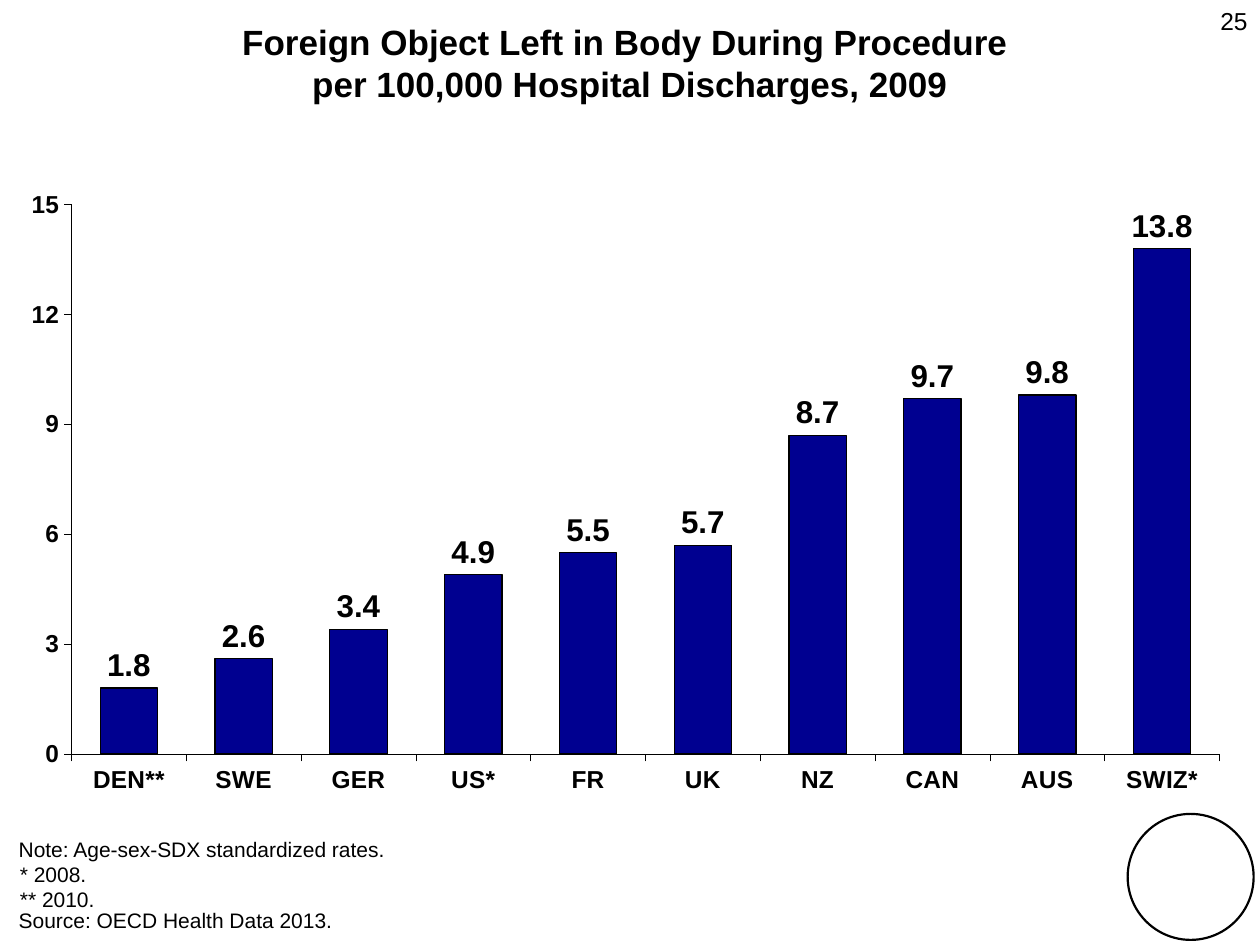
from lxml.etree import SubElement
from pptx import Presentation
from pptx.chart.data import CategoryChartData
from pptx.dml.color import RGBColor
from pptx.enum.chart import XL_CHART_TYPE as ChartType
from pptx.enum.chart import XL_LABEL_POSITION as LabelPosition
from pptx.enum.chart import XL_TICK_MARK as TickMark
from pptx.enum.shapes import MSO_SHAPE as Preset
from pptx.enum.text import MSO_ANCHOR as Anchor
from pptx.enum.text import PP_ALIGN as Align
from pptx.oxml.ns import qn
from pptx.util import Inches, Pt

FONT, BLACK, NAVY = "Arial", "000000", "000090"
WIDTH, HEIGHT = Inches(10), Inches(7.5)
COLUMNS, ROWS = 100, 75

RATES = {"DEN**": 1.8, "SWE": 2.6, "GER": 3.4, "US*": 4.9, "FR": 5.5,
         "UK": 5.7, "NZ": 8.7, "CAN": 9.7, "AUS": 9.8, "SWIZ*": 13.8}


def color(value):
    return RGBColor.from_string(value)


def place(left, top, columns, rows):
    """Turn grid columns and rows into slide lengths."""
    return (int(WIDTH * left / COLUMNS), int(HEIGHT * top / ROWS),
            int(WIDTH * columns / COLUMNS), int(HEIGHT * rows / ROWS))


def style_font(font, size, bold=False):
    font.name, font.size, font.bold = FONT, Pt(size), bold
    font.color.rgb = color(BLACK)


def style_line(line, width):
    line.color.rgb = color(BLACK)
    line.width = Pt(width)


def add_text(slide, box, lines, size=12, bold=False, align=Align.LEFT, anchor=Anchor.TOP):
    """Add one paragraph per line; a vertical tab breaks within a paragraph."""
    frame = slide.shapes.add_textbox(*place(*box)).text_frame
    frame.word_wrap = True
    frame.vertical_anchor = anchor
    frame.text = "\n".join(lines)
    for paragraph in frame.paragraphs:
        paragraph.alignment = align
        for run in paragraph.runs:
            style_font(run.font, size, bold)


def add_header(slide, box):
    left, top, columns, rows = box
    add_text(slide, (left, top + 1, columns, rows - 1),
             ["Foreign Object Left in Body During Procedure \v"
              "per 100,000 Hospital Discharges, 2009"],
             size=20, bold=True, align=Align.CENTER, anchor=Anchor.MIDDLE)
    number_width = 23.3
    add_text(slide, (left + columns - number_width, top, number_width, 5.2),
             ["25"], size=14, align=Align.RIGHT)


def set_plot_area(chart, x, y, w, h):
    """Fix the inner plot area as shares of the chart."""
    plot_area = chart._chartSpace.chart.plotArea
    layout = plot_area.find(qn("c:layout"))
    if layout is None:
        layout = SubElement(plot_area, qn("c:layout"))
        plot_area.insert(0, layout)
    manual = SubElement(layout, qn("c:manualLayout"))
    settings = {"layoutTarget": "inner", "xMode": "edge", "yMode": "edge",
                "x": x, "y": y, "w": w, "h": h}
    for name, value in settings.items():
        SubElement(manual, qn(f"c:{name}")).set("val", str(value))


def add_rate_chart(slide, box):
    data = CategoryChartData()
    data.categories = list(RATES)
    data.add_series("Series 1", list(RATES.values()))
    chart = slide.shapes.add_chart(ChartType.COLUMN_CLUSTERED, *place(*box), data).chart
    chart.has_legend = chart.has_title = False
    style_font(chart.font, 14, bold=True)
    set_plot_area(chart, 0.03, 0.07, 0.97, 0.86)

    # Axes
    for axis in (chart.category_axis, chart.value_axis):
        axis.has_major_gridlines = False
        axis.major_tick_mark = TickMark.OUTSIDE
        axis.minor_tick_mark = TickMark.NONE
        style_font(axis.tick_labels.font, 14, bold=True)
        style_line(axis.format.line, 0.29)
    value_axis = chart.value_axis
    value_axis.minimum_scale, value_axis.maximum_scale = 0, 15
    value_axis.major_unit = 3
    value_axis.tick_labels.number_format = "#,##0"
    value_axis.tick_labels.number_format_is_linked = False

    # Columns
    plot = chart.plots[0]
    plot.gap_width = 100
    plot.vary_by_categories = False
    series = plot.series[0]
    series.format.fill.solid()
    series.format.fill.fore_color.rgb = color(NAVY)
    style_line(series.format.line, 0.75)

    # Value labels
    labels = series.data_labels
    labels.show_value = True
    labels.position = LabelPosition.OUTSIDE_END
    labels.number_format = "#,##0.0"
    labels.number_format_is_linked = False
    style_font(labels.font, 18, bold=True)


def add_footer(slide, box):
    left, top, columns, rows = box
    add_text(slide, (left, top, columns, 3), ["Note: Age-sex-SDX standardized rates."])
    add_text(slide, (left + 0.1, top + 2, columns, 5), ["* 2008.", "** 2010."])
    add_text(slide, (left, top + rows - 3, columns, 3), ["Source: OECD Health Data 2013."])


def add_emblem(slide, box):
    circle = slide.shapes.add_shape(Preset.OVAL, *place(*box))
    circle.shadow.inherit = False
    circle.fill.background()
    style_line(circle.line, 1.25)


def main():
    presentation = Presentation()
    presentation.slide_width, presentation.slide_height = WIDTH, HEIGHT
    slide = presentation.slides.add_slide(presentation.slide_layouts[6])
    add_header(slide, (0, 0, COLUMNS, 9))
    add_rate_chart(slide, (2.5, 12.7, 94.3, 50.7))
    add_footer(slide, (0.5, 65.9, 72, 8.6))
    add_emblem(slide, (89.5, 64.6, 10, 10))
    presentation.save("out.pptx")


if __name__ == "__main__":
    main()
